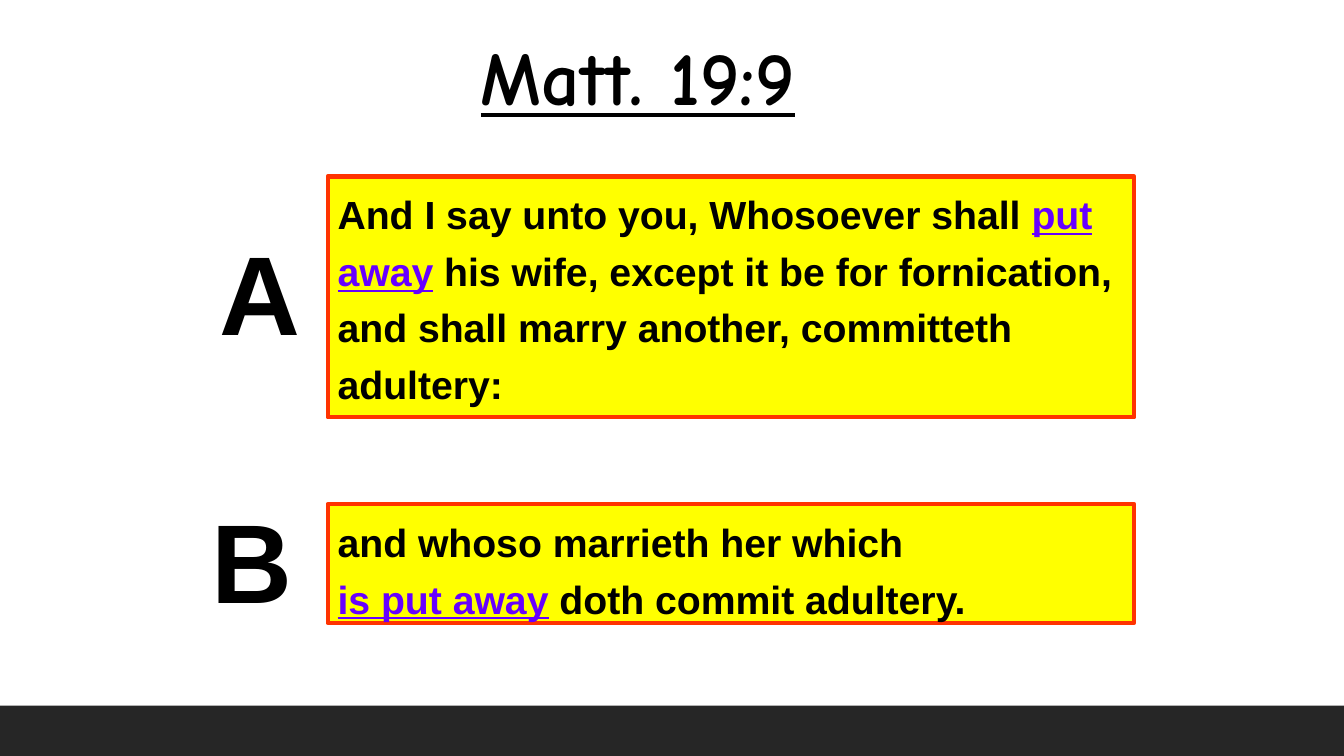
from pptx import Presentation
from pptx.dml.color import RGBColor
from pptx.enum.shapes import MSO_SHAPE as Shape
from pptx.enum.text import MSO_ANCHOR as Anchor, MSO_AUTO_SIZE as AutoSize, PP_ALIGN as Align
from pptx.util import Inches, Pt

COLORS = {"text": "000000", "phrase": "6600FF", "panel": "FFFF00",
          "border": "FF3300", "footer": "262626"}


def add_run(paragraph, text, size, color="text", font="Arial", underline=False):
    run = paragraph.add_run()
    run.text = text
    run.font.name = font
    run.font.size = Pt(size)
    run.font.bold = True
    run.font.underline = underline
    run.font.color.rgb = RGBColor.from_string(COLORS[color])


def add_panel(left, top, width, height, fill):
    panel = slide.shapes.add_shape(
        Shape.RECTANGLE, Inches(left), Inches(top), Inches(width), Inches(height))
    panel.shadow.inherit = False
    panel.fill.solid()
    panel.fill.fore_color.rgb = RGBColor.from_string(COLORS[fill])
    panel.line.fill.background()
    return panel


prs = Presentation()
prs.slide_width = Inches(13.33)
prs.slide_height = Inches(7.5)
slide = prs.slides.add_slide(prs.slide_layouts[5])

add_panel(0, 7, 13.33, 0.5, "footer")

reference = slide.shapes.title
reference.left, reference.top = Inches(4.67), Inches(0.25)
reference.width, reference.height = Inches(4.34), Inches(1)
heading = reference.text_frame
heading.auto_size = AutoSize.NONE
heading.vertical_anchor = Anchor.TOP
heading.paragraphs[0].alignment = Align.LEFT
add_run(heading.paragraphs[0], "Matt. 19:9", 54, font="Comic Neue", underline=True)

clauses = [
    ("A", 2.08, 2.17, 1.75, 2.39, [
        [("And I say unto you, Whosoever shall ", False),
         ("put away", True),
         (" his wife, except it be for fornication, and shall marry another, "
          "committeth adultery:", False)],
    ]),
    ("B", 2, 4.83, 5, 1.18, [
        [("and whoso marrieth her which", False)],
        [("is put away", True), (" doth commit adultery.", False)],
    ]),
]

for letter, letter_left, letter_top, top, height, lines in clauses:
    clause = add_panel(3.25, top, 8, height, "panel")
    clause.line.color.rgb = RGBColor.from_string(COLORS["border"])
    clause.line.width = Pt(3)
    verse = clause.text_frame
    verse.word_wrap = True
    verse.vertical_anchor = Anchor.TOP
    for index, line in enumerate(lines):
        paragraph = verse.add_paragraph() if index else verse.paragraphs[0]
        paragraph.alignment = Align.LEFT
        paragraph.line_spacing = 1.2
        for text, key_phrase in line:
            add_run(paragraph, text, 28, "phrase" if key_phrase else "text",
                    underline=key_phrase)

    label = slide.shapes.add_textbox(
        Inches(letter_left), Inches(letter_top), Inches(1), Inches(1.43)).text_frame
    label.word_wrap = False
    add_run(label.paragraphs[0], letter, 80)

prs.save("out.pptx")
